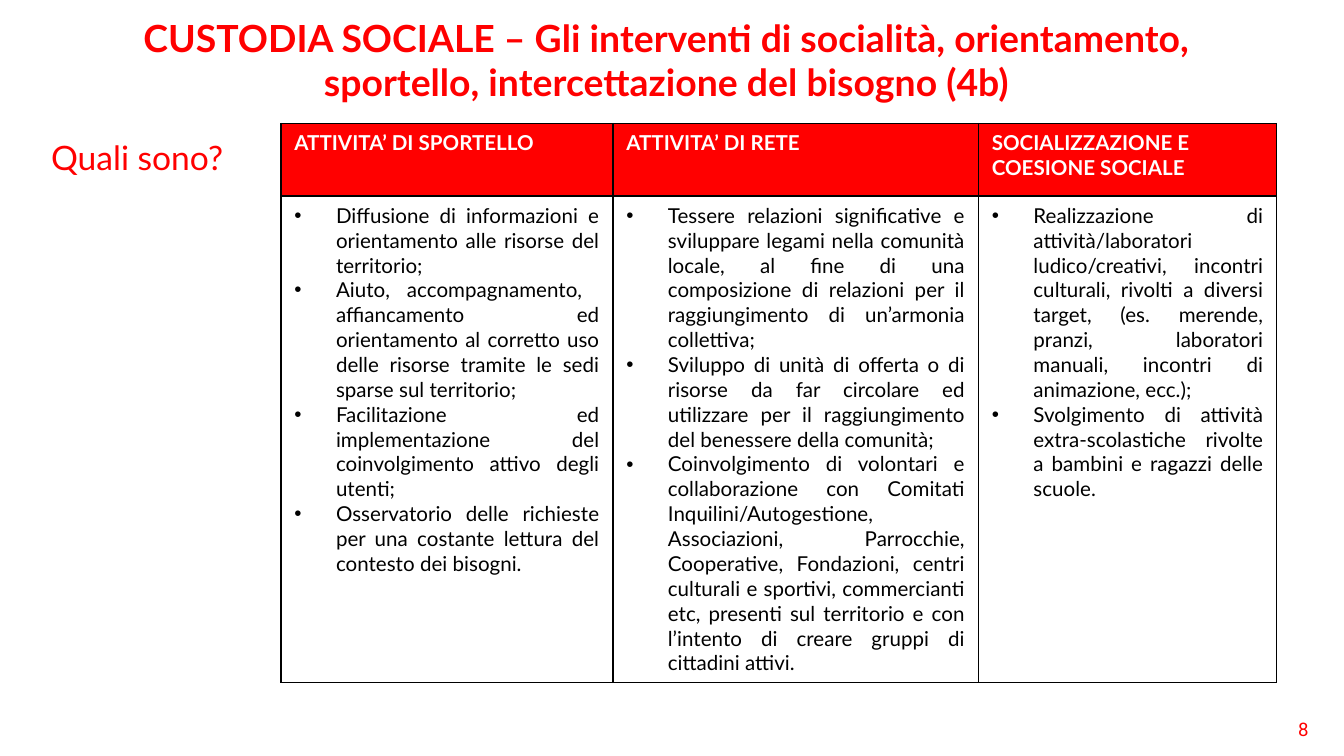
"""Build the slide on outreach, help desk and networking activities."""
from pptx import Presentation
from pptx.dml.color import RGBColor
from pptx.enum.text import MSO_ANCHOR, MSO_AUTO_SIZE, PP_ALIGN
from pptx.oxml import parse_xml
from pptx.oxml.ns import nsdecls
from pptx.util import Inches, Pt

RED = RGBColor(0xFF, 0x00, 0x00)
WHITE = RGBColor(0xFF, 0xFF, 0xFF)
BLACK = RGBColor(0x00, 0x00, 0x00)

COLUMNS = [
    (2.47, "ATTIVITA’ DI SPORTELLO", [
        "Diffusione di informazioni e orientamento alle risorse del territorio;",
        "Aiuto, accompagnamento,  affiancamento ed orientamento al corretto uso "
        "delle risorse tramite le sedi sparse sul territorio;",
        "Facilitazione ed implementazione del coinvolgimento attivo degli utenti;",
        "Osservatorio delle richieste per una costante lettura del contesto dei bisogni.",
    ]),
    (2.72, "ATTIVITA’ DI RETE", [
        "Tessere relazioni significative e sviluppare legami nella comunità locale, "
        "al fine di una composizione di relazioni per il raggiungimento di "
        "un’armonia collettiva;",
        "Sviluppo di unità di offerta o di risorse da far circolare ed utilizzare "
        "per il raggiungimento del benessere della comunità;",
        "Coinvolgimento di volontari e collaborazione con Comitati "
        "Inquilini/Autogestione, Associazioni, Parrocchie, Cooperative, Fondazioni, "
        "centri culturali e sportivi, commercianti etc, presenti sul territorio e "
        "con l’intento di creare gruppi di cittadini attivi.",
    ]),
    (2.22, "SOCIALIZZAZIONE E COESIONE SOCIALE", [
        "Realizzazione di attività/laboratori ludico/creativi, incontri culturali, "
        "rivolti a diversi target, (es. merende, pranzi, laboratori manuali, "
        "incontri di animazione, ecc.);",
        "Svolgimento di attività extra-scolastiche rivolte a bambini e ragazzi "
        "delle scuole.",
    ]),
]


def format_runs(paragraph, size, color, bold=False, name="Lato"):
    for run in paragraph.runs:
        run.font.name = name
        run.font.size = Pt(size)
        run.font.bold = bold
        run.font.color.rgb = color


def fill_cell(cell, lines, color, fill=None):
    properties = cell._tc.get_or_add_tcPr()
    for side in ("lnL", "lnR", "lnT", "lnB"):
        properties.append(parse_xml(
            f'<a:{side} {nsdecls("a")} w="12700"><a:solidFill>'
            f'<a:srgbClr val="{BLACK}"/></a:solidFill></a:{side}>'))
    if fill is None:
        cell.fill.background()
    else:
        cell.fill.solid()
        cell.fill.fore_color.rgb = fill
    cell.text_frame.text = "\n".join(lines)
    for paragraph in cell.text_frame.paragraphs:
        format_runs(paragraph, 11, color, bold=fill is not None)


presentation = Presentation()
presentation.slide_width = Inches(10)
presentation.slide_height = Inches(10) * 9 // 16
slide = presentation.slides.add_slide(presentation.slide_layouts[1])

title = slide.shapes.title
title.left, title.top = Inches(0.43), Inches(0.06)
title.width, title.height = Inches(9.06), Inches(0.55)
title.text_frame.text = (
    "CUSTODIA SOCIALE – Gli interventi di socialità, orientamento, "
    "sportello, intercettazione del bisogno (4b)")
title.text_frame.vertical_anchor = MSO_ANCHOR.TOP
title.text_frame.auto_size = MSO_AUTO_SIZE.NONE
title.text_frame.paragraphs[0].alignment = PP_ALIGN.CENTER
format_runs(title.text_frame.paragraphs[0], 20, RED, bold=True)

question = slide.placeholders[1]
question.left, question.top = Inches(0.28), Inches(1)
question.width, question.height = Inches(8.98), Inches(0.55)
question.text_frame.text = "Quali sono?"
question.text_frame.auto_size = MSO_AUTO_SIZE.NONE
paragraph = question.text_frame.paragraphs[0]
properties = paragraph._p.get_or_add_pPr()
properties.set("marL", "0")
properties.set("indent", "0")
properties.append(parse_xml(f'<a:buNone {nsdecls("a")}/>'))
paragraph.alignment = PP_ALIGN.JUSTIFY
paragraph.line_spacing = 0.9
paragraph.space_before = Pt(0)
format_runs(paragraph, 18, RED)

table = slide.shapes.add_table(
    2, len(COLUMNS), Inches(2.09), Inches(0.92), Inches(7.41), Inches(4.16)).table
table.horz_banding = False
table.rows[0].height = Inches(0.54)
table.rows[1].height = Inches(3.62)
for index, (width, heading, activities) in enumerate(COLUMNS):
    table.columns[index].width = Inches(width)
    fill_cell(table.cell(0, index), [heading], WHITE, RED)
    activity_cell = table.cell(1, index)
    fill_cell(activity_cell, activities, BLACK)
    for paragraph in activity_cell.text_frame.paragraphs:
        properties = paragraph._p.get_or_add_pPr()
        properties.set("marL", str(Inches(0.31)))
        properties.set("indent", str(Inches(-0.31)))
        properties.append(parse_xml(
            f'<a:buFont {nsdecls("a")} typeface="Arial"/>'))
        properties.append(parse_xml(f'<a:buChar {nsdecls("a")} char="•"/>'))
        paragraph.alignment = PP_ALIGN.JUSTIFY

page_number = slide.shapes.add_textbox(
    Inches(9.45), Inches(5.29), Inches(0.53), Inches(0.27))
page_number.text_frame.word_wrap = True
page_number.text_frame.margin_left = Inches(0.21)
page_number.text_frame.text = "8"
format_runs(page_number.text_frame.paragraphs[0], 10, RED, name="Roboto")

presentation.save("out.pptx")
